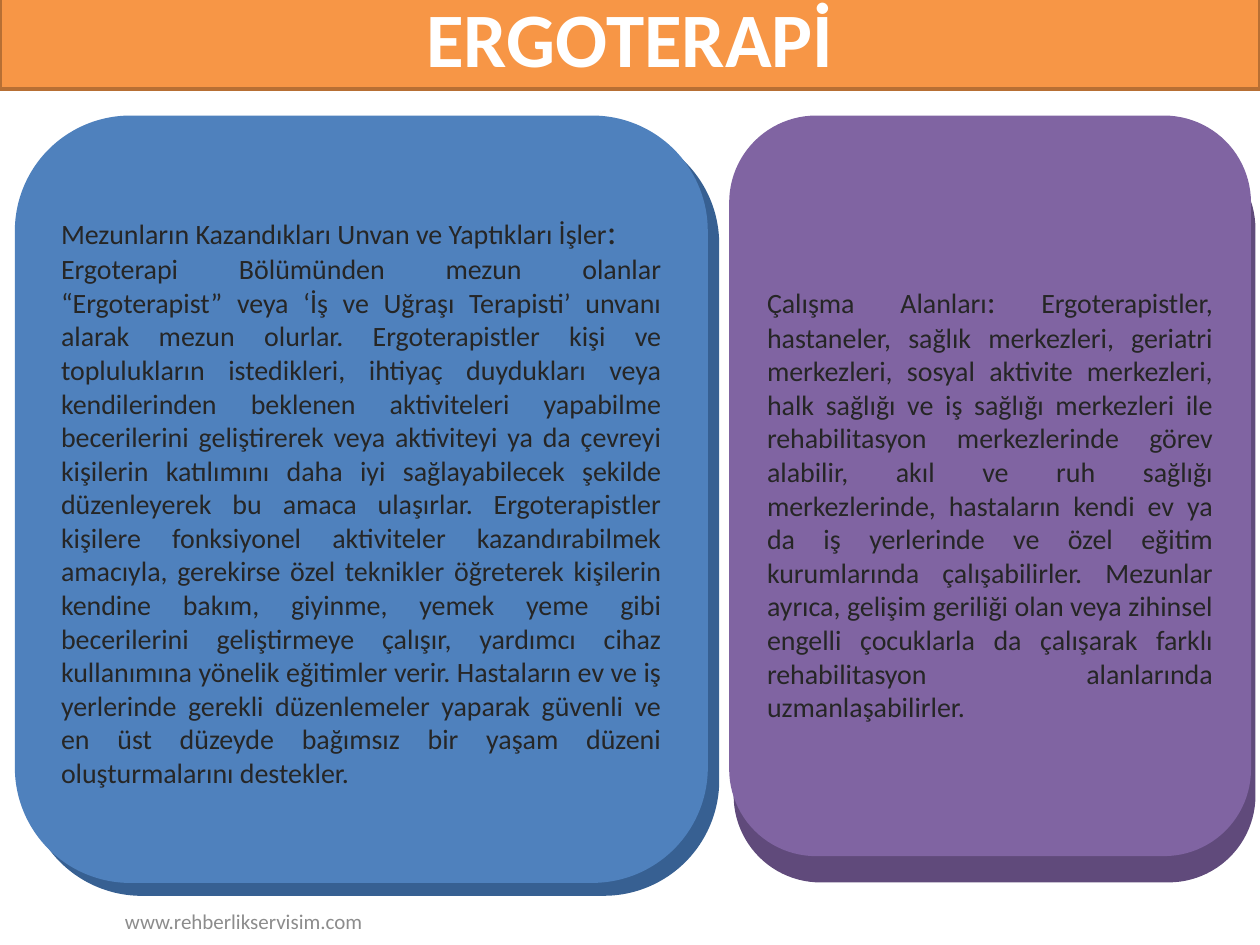
from pptx import Presentation
from pptx.dml.color import RGBColor
from pptx.enum.shapes import MSO_SHAPE
from pptx.enum.text import MSO_ANCHOR, PP_ALIGN
from pptx.util import Cm, Pt

RECT, ROUNDED = MSO_SHAPE.RECTANGLE, MSO_SHAPE.ROUNDED_RECTANGLE
MIDDLE = MSO_ANCHOR.MIDDLE
CENTER, JUSTIFY = PP_ALIGN.CENTER, PP_ALIGN.JUSTIFY
FONT = "Calibri"
COLORS = {
    "orange": "F79646", "orange_line": "B76F34",
    "blue": "4F81BD", "blue_dark": "376092",
    "purple": "8064A2", "purple_dark": "604A7B",
    "white": "FFFFFF", "ink": "262626", "gray": "8C8C8C",
}

DUTIES = (
    "Ergoterapi Bölümünden mezun olanlar “Ergoterapist” veya ‘İş ve Uğraşı Terapisti’ "
    "unvanı alarak mezun olurlar. Ergoterapistler kişi ve toplulukların istedikleri, "
    "ihtiyaç duydukları veya kendilerinden beklenen aktiviteleri yapabilme becerilerini "
    "geliştirerek veya aktiviteyi ya da çevreyi kişilerin katılımını daha iyi "
    "sağlayabilecek şekilde düzenleyerek bu amaca ulaşırlar. Ergoterapistler kişilere "
    "fonksiyonel aktiviteler kazandırabilmek amacıyla, gerekirse özel teknikler öğreterek "
    "kişilerin kendine bakım, giyinme, yemek yeme gibi becerilerini geliştirmeye çalışır, "
    "yardımcı cihaz kullanımına yönelik eğitimler verir. Hastaların ev ve iş yerlerinde "
    "gerekli düzenlemeler yaparak güvenli ve en üst düzeyde bağımsız bir yaşam düzeni "
    "oluşturmalarını destekler."
)
WORKPLACES = (
    " Ergoterapistler, hastaneler, sağlık merkezleri, geriatri merkezleri, sosyal "
    "aktivite merkezleri, halk sağlığı ve iş sağlığı merkezleri ile rehabilitasyon "
    "merkezlerinde görev alabilir, akıl ve ruh sağlığı merkezlerinde, hastaların kendi ev "
    "ya da iş yerlerinde ve özel eğitim kurumlarında çalışabilirler. Mezunlar ayrıca, "
    "gelişim geriliği olan veya zihinsel engelli çocuklarla da çalışarak farklı "
    "rehabilitasyon alanlarında uzmanlaşabilirler."
)


def rgb(name):
    return RGBColor.from_string(COLORS[name])


def write(tf, paragraphs, size=16, color="ink", bold=False, align=JUSTIFY):
    """Fill a text frame with paragraphs, each a list of (text, size or None) runs."""
    tf.word_wrap = True
    tf.vertical_anchor = MIDDLE
    for i, runs in enumerate(paragraphs):
        p = tf.add_paragraph() if i else tf.paragraphs[0]
        p.alignment = align
        for text, run_size in runs:
            r = p.add_run()
            r.text = text
            r.font.name = FONT
            r.font.size = Pt(run_size or size)
            r.font.bold = bold
            r.font.color.rgb = rgb(color)


class SlideBuilder:
    """Hold the current slide and draw its elements in one style."""

    def __init__(self, slide):
        self.s = slide

    def block(self, shapes, kind, box, fill, line=None):
        sp = shapes.add_shape(kind, *map(Cm, box))
        sp.shadow.inherit = False
        sp.fill.solid()
        sp.fill.fore_color.rgb = rgb(fill)
        if line:
            sp.line.color.rgb = rgb(line)
            sp.line.width = Pt(2)
        else:
            sp.line.fill.background()
        return sp

    def title(self, text, box):
        sp = self.block(self.s.shapes, RECT, box, "orange", "orange_line")
        write(sp.text_frame, [[(text, None)]], size=44, color="white", bold=True, align=CENTER)

    def card(self, box, offset, color, paragraphs, margin_top=0.13):
        x, y, w, h = box
        dx, dy = offset
        shapes = self.s.shapes.add_group_shape().shapes
        self.block(shapes, ROUNDED, (x + dx, y + dy, w, h), f"{color}_dark")
        sp = self.block(shapes, ROUNDED, box, color)
        sp.text_frame.margin_top = Cm(margin_top)
        write(sp.text_frame, paragraphs)

    def footer(self, text, box):
        sp = self.s.shapes.add_textbox(*map(Cm, box))
        write(sp.text_frame, [[(text, None)]], size=12, color="gray", align=CENTER)


def main():
    prs = Presentation()
    prs.slide_width, prs.slide_height = Cm(25.4), Cm(19.05)
    s = SlideBuilder(prs.slides.add_slide(prs.slide_layouts[6]))
    s.title("ERGOTERAPİ", (0, -0.33, 25.4, 2.13))
    s.card((0.3, 2.33, 13.97, 15.47), (0.23, 0.26), "blue", [
        [("Mezunların Kazandıkları Unvan ve Yaptıkları İşler", None), (":", 20)],
        [(DUTIES, None)],
    ])
    s.card((14.7, 2.33, 10.52, 14.93), (0.09, 0.53), "purple", [
        [("Çalışma Alanları", None), (":", 18), (WORKPLACES, None)],
    ], margin_top=0.81)
    s.footer("www.rehberlikservisim.com", (0.89, 18.06, 8.05, 1.02))
    prs.save("out.pptx")


if __name__ == "__main__":
    main()
